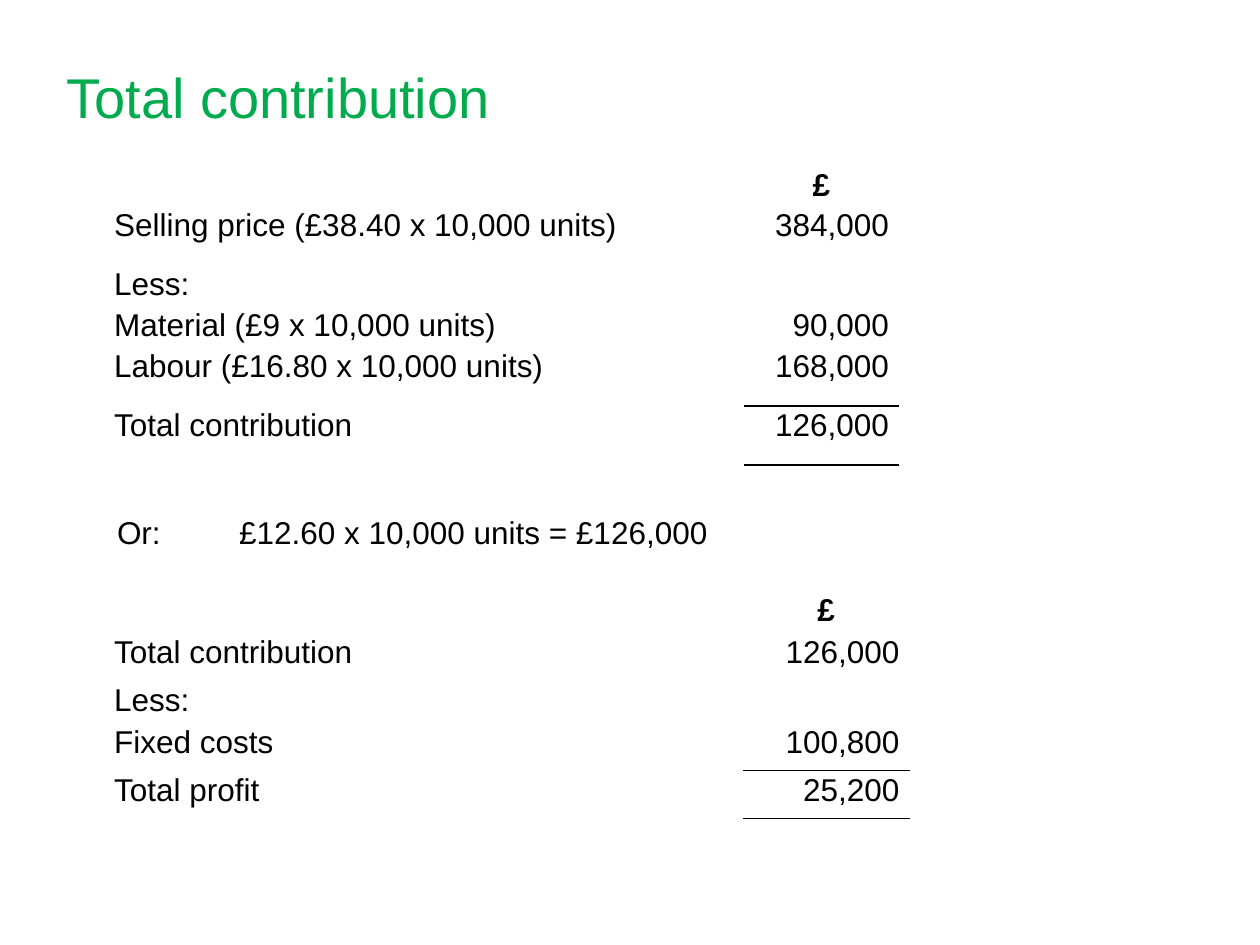
"""Build the total contribution slide with two contribution statements."""
from dataclasses import dataclass

from pptx import Presentation
from pptx.dml.color import RGBColor
from pptx.enum.text import MSO_ANCHOR, PP_ALIGN
from pptx.oxml import parse_xml
from pptx.oxml.ns import nsdecls
from pptx.util import Cm, Pt


@dataclass(frozen=True)
class Theme:
    font: str = "Arial"
    title_colour: str = "00AB4E"
    ink: str = "000000"
    title_size: int = 32
    body_size: int = 18
    rule_width: int = 1
    line_spacing: float = 1.07


THEME = Theme()
LEFT = 2.11
TITLE = "Total contribution"
ALTERNATIVE = "Or:\t£12.60 x 10,000 units = £126,000"
STATEMENTS = [
    {
        "top": 3.33,
        "columns": (12.9, 3.1),
        "rows": [
            ("", "£", 0.61),
            ("Selling price (£38.40 x 10,000 units)", "384,000", 1.19),
            ("Less:", "", 0.61),
            ("Material (£9 x 10,000 units)", "90,000", 0.84),
            ("Labour (£16.80 x 10,000 units)", "168,000", 1.19),
            ("Total contribution", "126,000", 1.19),
        ],
    },
    {
        "top": 11.91,
        "columns": (12.88, 3.33),
        "rows": [
            ("", "£", 0.84),
            ("Total contribution", "126,000", 0.97),
            ("Less:", "", 0.84),
            ("Fixed costs", "100,800", 0.97),
            ("Total profit", "25,200", 0.97),
        ],
    },
]


def write(frame, text, *, size=THEME.body_size, colour=THEME.ink, bold=False,
          align=PP_ALIGN.LEFT, spacing=None, tab=None):
    para = frame.paragraphs[0]
    para.alignment = align
    para.line_spacing = spacing
    if tab:
        para._p.get_or_add_pPr().append(parse_xml(
            f'<a:tabLst {nsdecls("a")}><a:tab pos="{Cm(tab)}" algn="l"/></a:tabLst>'))
    if text:
        span = para.add_run()
        span.text = text
        span.font.name = THEME.font
        span.font.size = Pt(size)
        span.font.bold = bold
        span.font.color.rgb = RGBColor.from_string(colour)


def add_text(page, text, left, top, width, height, anchor=MSO_ANCHOR.TOP, **style):
    frame = page.shapes.add_textbox(Cm(left), Cm(top), Cm(width), Cm(height)).text_frame
    frame.word_wrap = True
    frame.vertical_anchor = anchor
    write(frame, text, **style)


def add_rules(cell, sides):
    properties = cell._tc.get_or_add_tcPr()
    for position, side in enumerate(sides):
        properties.insert(position, parse_xml(
            f'<a:ln{side} {nsdecls("a")} w="{Pt(THEME.rule_width)}"><a:solidFill>'
            f'<a:srgbClr val="{THEME.ink}"/></a:solidFill></a:ln{side}>'))


def add_statement(page, top, columns, rows):
    height = sum(row[-1] for row in rows)
    table = page.shapes.add_table(len(rows), len(columns), Cm(LEFT), Cm(top),
                                  Cm(sum(columns)), Cm(height)).table
    table.first_row = table.horz_banding = False
    for column, width in zip(table.columns, columns):
        column.width = Cm(width)
    for index, (label, amount, row_height) in enumerate(rows):
        table.rows[index].height = Cm(row_height)
        heading = index == 0
        amount_align = PP_ALIGN.CENTER if heading else PP_ALIGN.RIGHT
        for column, (text, align) in enumerate([(label, PP_ALIGN.LEFT), (amount, amount_align)]):
            cell = table.cell(index, column)
            cell.fill.background()
            cell.margin_left = cell.margin_right = Cm(0.19)
            cell.margin_top = cell.margin_bottom = Cm(0)
            write(cell.text_frame, text, bold=heading, align=align,
                  spacing=THEME.line_spacing)
    add_rules(table.cell(len(rows) - 2, 1), "B")
    add_rules(table.cell(len(rows) - 1, 1), "TB")


def main():
    deck = Presentation()
    deck.slide_width, deck.slide_height = Cm(25.4), Cm(19.05)
    page = deck.slides.add_slide(deck.slide_layouts[6])
    add_text(page, TITLE, 1.09, 0.33, 23.19, 3.2, anchor=MSO_ANCHOR.MIDDLE,
             size=THEME.title_size, colour=THEME.title_colour)
    for statement in STATEMENTS:
        add_statement(page, **statement)
    add_text(page, ALTERNATIVE, LEFT, 10.21, 19.2, 1.02, tab=2.46)
    deck.save("out.pptx")


if __name__ == "__main__":
    main()
